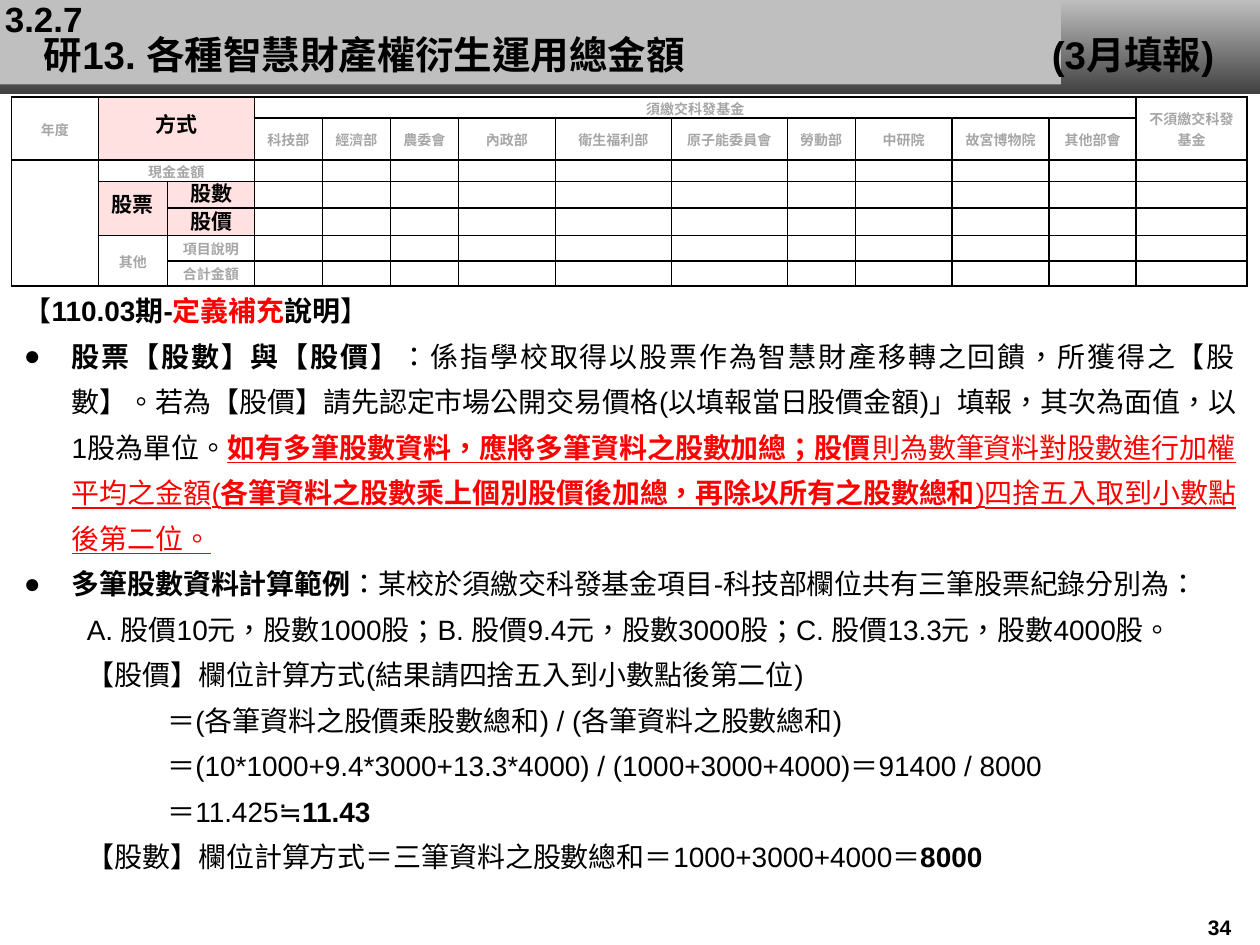
from pptx import Presentation
from pptx.dml.color import RGBColor
from pptx.enum.lang import MSO_LANGUAGE_ID
from pptx.enum.shapes import MSO_SHAPE
from pptx.enum.text import MSO_ANCHOR, PP_ALIGN
from pptx.oxml.ns import qn
from pptx.util import Inches, Pt
from lxml.etree import SubElement

THEME = {
    "latin": "Arial", "asian": "Noto Sans CJK SC",
    "text": "000000", "alert": "FF0000", "muted": "A6A6A6",
    "band": "BFBFBF", "band_dark": "404040", "highlight": "FFE1E1",
    "title": 22, "section": 20, "body": 16, "label": 12, "small": 8,
    "body_line": 26, "cell_line": 12,
}

# ---- Content ----
# Span styles: b = bold, r = red, u = underlined
BODY = [
    ("plain", [("【", ""), ("110.03期-", "b"), ("定義補充", "br"), ("說明", "b"), ("】", "")]),
    ("bullet", [
        ("股票【股數】與【股價】", "b"),
        ("：係指學校取得以股票作為智慧財產移轉之回饋，所獲得之【股數】。若為【股價】"
         "請先認定市場公開交易價格(以填報當日股價金額)」填報，其次為面值，以1股為單位。", ""),
        ("如有多筆股數資料，應將多筆資料之股數加總；股價", "bru"),
        ("則為數筆資料對股數進行加權平均之金額(", "ru"),
        ("各筆資料之股數乘上個別股價後加總，再除以所有之股數總和", "bru"),
        (")四捨五入取到小數點後第二位。", "ru")]),
    ("bullet", [
        ("多筆股數資料計算範例", "b"),
        ("：某校於須繳交科發基金項目-科技部欄位共有三筆股票紀錄分別為：", "")]),
    ("detail", [("A. 股價10元，股數1000股；B. 股價9.4元，股數3000股；"
                 "C. 股價13.3元，股數4000股。", "")]),
    ("detail", [("【股價】欄位計算方式(結果請四捨五入到小數點後第二位)", "")]),
    ("formula", [("＝(各筆資料之股價乘股數總和) / (各筆資料之股數總和)", "")]),
    ("formula", [("＝(10*1000+9.4*3000+13.3*4000) / (1000+3000+4000)＝91400 / 8000", "")]),
    ("formula", [("＝11.425≒", ""), ("11.43", "b")]),
    ("detail", [("【股數】欄位計算方式＝三筆資料之股數總和＝1000+3000+4000＝", ""), ("8000", "b")]),
]
# Paragraph kind: left margin, first-line indent, level, alignment
KINDS = {
    "plain": (0, 0, 0, PP_ALIGN.JUSTIFY),
    "bullet": (0.38, -0.38, 0, PP_ALIGN.JUSTIFY),
    "detail": (0.5, 0, 1, PP_ALIGN.JUSTIFY),
    "formula": (1.14, 0, 1, PP_ALIGN.LEFT),
}

COLUMNS = [0.69, 0.55, 0.69, 0.54, 0.54, 0.54, 0.77, 0.92, 0.92, 0.54, 0.77, 0.77, 0.69, 0.88]
ROWS = [0.16, 0.33, 0.17, 0.21, 0.22, 0.2, 0.2]
MINISTRIES = ["科技部", "經濟部", "農委會", "內政部", "衛生福利部", "原子能委員會",
              "勞動部", "中研院", "故宮博物院", "其他部會"]
# (row, column): text, rows spanned, columns spanned
CELLS = {
    (0, 0): ("年度", 2, 1), (0, 1): ("方式", 2, 2),
    (0, 3): ("須繳交科發基金", 1, 10), (0, 13): ("不須繳交科發基金", 2, 1),
    (2, 0): ("", 5, 1), (2, 1): ("現金金額", 1, 2),
    (3, 1): ("股票", 2, 1), (3, 2): ("股數", 1, 1), (4, 2): ("股價", 1, 1),
    (5, 1): ("其他", 2, 1), (5, 2): ("項目說明", 1, 1), (6, 2): ("合計金額", 1, 1),
}
CELLS.update({(1, 3 + i): (name, 1, 1) for i, name in enumerate(MINISTRIES)})
HIGHLIGHTED = {"方式", "股票", "股數", "股價"}
BOTTOM_ALIGNED = {"股數", "股價"}


# ---- Helpers ----
def color(name):
    return RGBColor.from_string(THEME[name])


def add_span(para, text, size, tint="text", latin="latin", **formats):
    span = para.add_run()
    span.text = text
    values = {"name": THEME[latin], "size": Pt(THEME[size]),
              "language_id": MSO_LANGUAGE_ID.TRADITIONAL_CHINESE, **formats}
    for key, value in values.items():
        setattr(span.font, key, value)
    span.font.color.rgb = color(tint)
    latin_node = span.font._element.find(qn("a:latin"))
    asian_node = SubElement(span.font._element, qn("a:ea"), typeface=THEME["asian"])
    latin_node.addnext(asian_node)


def add_box(page, area, anchor=MSO_ANCHOR.TOP):
    box = page.shapes.add_textbox(*map(Inches, area))
    box.text_frame.word_wrap = True
    box.text_frame.vertical_anchor = anchor
    return box.text_frame


def add_band(page, area):
    band = page.shapes.add_shape(MSO_SHAPE.RECTANGLE, *map(Inches, area))
    band.shadow.inherit = False
    band.line.fill.background()
    return band


def add_borders(cell):
    properties = cell._tc.get_or_add_tcPr()
    for index, side in enumerate(("a:lnL", "a:lnR", "a:lnT", "a:lnB")):
        line = SubElement(properties, qn(side), w=str(Pt(1)))
        fill = SubElement(line, qn("a:solidFill"))
        SubElement(fill, qn("a:srgbClr"), val=THEME["text"])
        properties.insert(index, line)


# ---- Slide parts ----
def add_header(page):
    shade = add_band(page, (0, 0, 10.01, 0.75))
    shade.fill.gradient()
    shade.fill.gradient_angle = 270
    for stop, position, name in zip(shade.fill.gradient_stops, (0, 1), ("band", "band_dark")):
        stop.position = position
        stop.color.rgb = color(name)
    front = add_band(page, (0, 0, 8.42, 0.67))
    front.fill.solid()
    front.fill.fore_color.rgb = color("band")

    title_frame = add_box(page, (0.25, 0.25, 9.75, 0.55))
    title_frame.margin_top = 0
    title = title_frame.paragraphs[0]
    add_span(title, "研13. 各種智慧財產權衍生運用總金額\t(3月填報)", "title", bold=True)
    tabs = SubElement(title._p.get_or_add_pPr(), qn("a:tabLst"))
    SubElement(tabs, qn("a:tab"), pos=str(Inches(8)), algn="l")
    section = add_box(page, (-0.06, -0.07, 0.97, 0.44)).paragraphs[0]
    add_span(section, "3.2.7", "section", bold=True)


def add_fund_table(page):
    frame = page.shapes.add_table(len(ROWS), len(COLUMNS), Inches(0.09), Inches(0.77),
                                  Inches(sum(COLUMNS)), Inches(sum(ROWS)))
    table = frame.table
    table.first_row = table.horz_banding = False
    for column, width in zip(table.columns, COLUMNS):
        column.width = Inches(width)
    for row, height in zip(table.rows, ROWS):
        row.height = Inches(height)

    for r in range(len(ROWS)):
        for c in range(len(COLUMNS)):
            cell = table.cell(r, c)
            text, row_span, column_span = CELLS.get((r, c), ("", 1, 1))
            strong = text in HIGHLIGHTED
            formats = {
                "margin_left": Inches(0.06), "margin_right": Inches(0.06),
                "margin_top": 0, "margin_bottom": 0,
                "vertical_anchor": MSO_ANCHOR.BOTTOM if text in BOTTOM_ALIGNED else MSO_ANCHOR.MIDDLE,
            }
            for key, value in formats.items():
                setattr(cell, key, value)
            if strong:
                cell.fill.solid()
                cell.fill.fore_color.rgb = color("highlight")
            else:
                cell.fill.background()
            add_borders(cell)
            para = cell.text_frame.paragraphs[0]
            para.alignment = PP_ALIGN.CENTER
            para.line_spacing = Pt(THEME["cell_line"])
            if text:
                add_span(para, text, "label" if strong else "small",
                         "text" if strong else "muted", "asian", bold=True)
            else:
                SubElement(para._p, qn("a:endParaRPr"), sz=str(THEME["small"] * 100))
            if row_span * column_span > 1:
                cell.merge(table.cell(r + row_span - 1, c + column_span - 1))


def add_body(page):
    frame = add_box(page, (0.09, 2.19, 9.82, 4.84))
    for index, (kind, spans) in enumerate(BODY):
        para = frame.add_paragraph() if index else frame.paragraphs[0]
        margin, indent, para.level, para.alignment = KINDS[kind]
        para.line_spacing = Pt(THEME["body_line"])
        properties = para._p.get_or_add_pPr()
        layout = {"marL": Inches(margin), "indent": Inches(indent), "hangingPunct": 0}
        for key, value in layout.items():
            properties.set(key, str(value))
        if kind == "bullet":
            SubElement(properties, qn("a:buFont"), typeface=THEME["latin"])
            SubElement(properties, qn("a:buChar"), char="●")
        for text, style in spans:
            add_span(para, text, "body", "alert" if "r" in style else "text",
                     bold="b" in style, underline="u" in style)


def main():
    deck = Presentation()
    deck.slide_width, deck.slide_height = Inches(10), Inches(7.5)
    page = deck.slides.add_slide(deck.slide_layouts[6])
    add_header(page)
    add_fund_table(page)
    add_body(page)
    number = add_box(page, (9.36, 7.22, 0.64, 0.28), MSO_ANCHOR.MIDDLE).paragraphs[0]
    number.alignment = PP_ALIGN.CENTER
    add_span(number, "34", "label", bold=True)
    deck.save("out.pptx")


if __name__ == "__main__":
    main()
